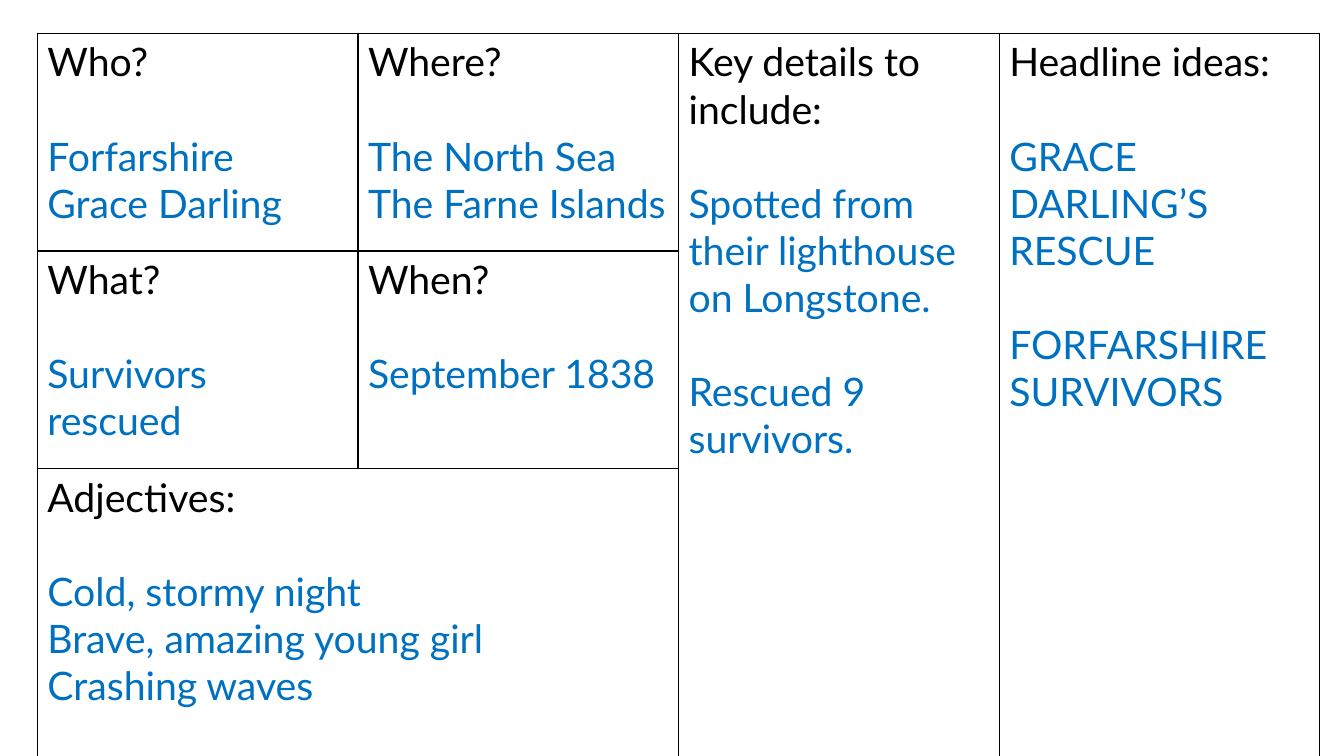
from itertools import product

from lxml.etree import SubElement
from pptx import Presentation
from pptx.dml.color import RGBColor
from pptx.oxml.ns import qn
from pptx.util import Pt

PX = 9144
FONT_SIZE = 28
LINE_HEIGHT = 33.6
BLACK = "000000"
BLUE = "0070C0"

COLUMN_WIDTH = 318
ROW_HEIGHTS = [216, 216, 290]

# (row, column, rows spanned, columns spanned, heading, groups of lines)
CELLS = [
    (0, 0, 1, 1, "Who?", [["Forfarshire", "Grace Darling"]]),
    (0, 1, 1, 1, "Where?", [["The North Sea", "The Farne Islands"]]),
    (0, 2, 3, 1, "Key details to include:",
     [["Spotted from their lighthouse on Longstone."], ["Rescued 9 survivors."]]),
    (0, 3, 3, 1, "Headline ideas:",
     [["GRACE DARLING’S RESCUE"], ["FORFARSHIRE SURVIVORS"]]),
    (1, 0, 1, 1, "What?", [["Survivors rescued"]]),
    (1, 1, 1, 1, "When?", [["September 1838"]]),
    (2, 0, 1, 2, "Adjectives:",
     [["Cold, stormy night", "Brave, amazing young girl", "Crashing waves"]]),
]


def px(length):
    return length * PX


def color(value):
    return RGBColor.from_string(value)


def style_cell(cell):
    properties = cell._tc.get_or_add_tcPr()
    for side in ("lnL", "lnR", "lnT", "lnB"):
        line = SubElement(properties, qn(f"a:{side}"), w=str(Pt(1)))
        fill = SubElement(line, qn("a:solidFill"))
        SubElement(fill, qn("a:srgbClr"), val=BLACK)
    cell.fill.background()


def write_line(paragraph, text, text_color, space_before=0):
    paragraph.text = text
    paragraph.font.name = "Lato"
    paragraph.font.size = Pt(FONT_SIZE)
    paragraph.font.color.rgb = color(text_color)
    if space_before:
        paragraph.space_before = Pt(space_before)


def fill_cell(cell, heading, groups):
    frame = cell.text_frame
    write_line(frame.paragraphs[0], heading, BLACK)
    for group in groups:
        for index, text in enumerate(group):
            gap = 0 if index else LINE_HEIGHT
            write_line(frame.add_paragraph(), text, BLUE, gap)


def add_planning_table(slide, left, top, column_count):
    row_count = len(ROW_HEIGHTS)
    table = slide.shapes.add_table(
        row_count, column_count, px(left), px(top),
        px(COLUMN_WIDTH * column_count), px(sum(ROW_HEIGHTS))).table
    table.first_row = False
    table.horz_banding = False
    for column in table.columns:
        column.width = px(COLUMN_WIDTH)
    for row, height in zip(table.rows, ROW_HEIGHTS):
        row.height = px(height)
    for row, column in product(range(row_count), range(column_count)):
        style_cell(table.cell(row, column))
    for row, column, rows, columns, heading, groups in CELLS:
        cell = table.cell(row, column)
        if rows * columns > 1:
            cell.merge(table.cell(row + rows - 1, column + columns - 1))
        fill_cell(cell, heading, groups)


def main():
    presentation = Presentation()
    presentation.slide_width = px(1333)
    presentation.slide_height = px(750)
    slide = presentation.slides.add_slide(presentation.slide_layouts[6])
    add_planning_table(slide, 37, 33, 4)
    presentation.save("out.pptx")


if __name__ == "__main__":
    main()
